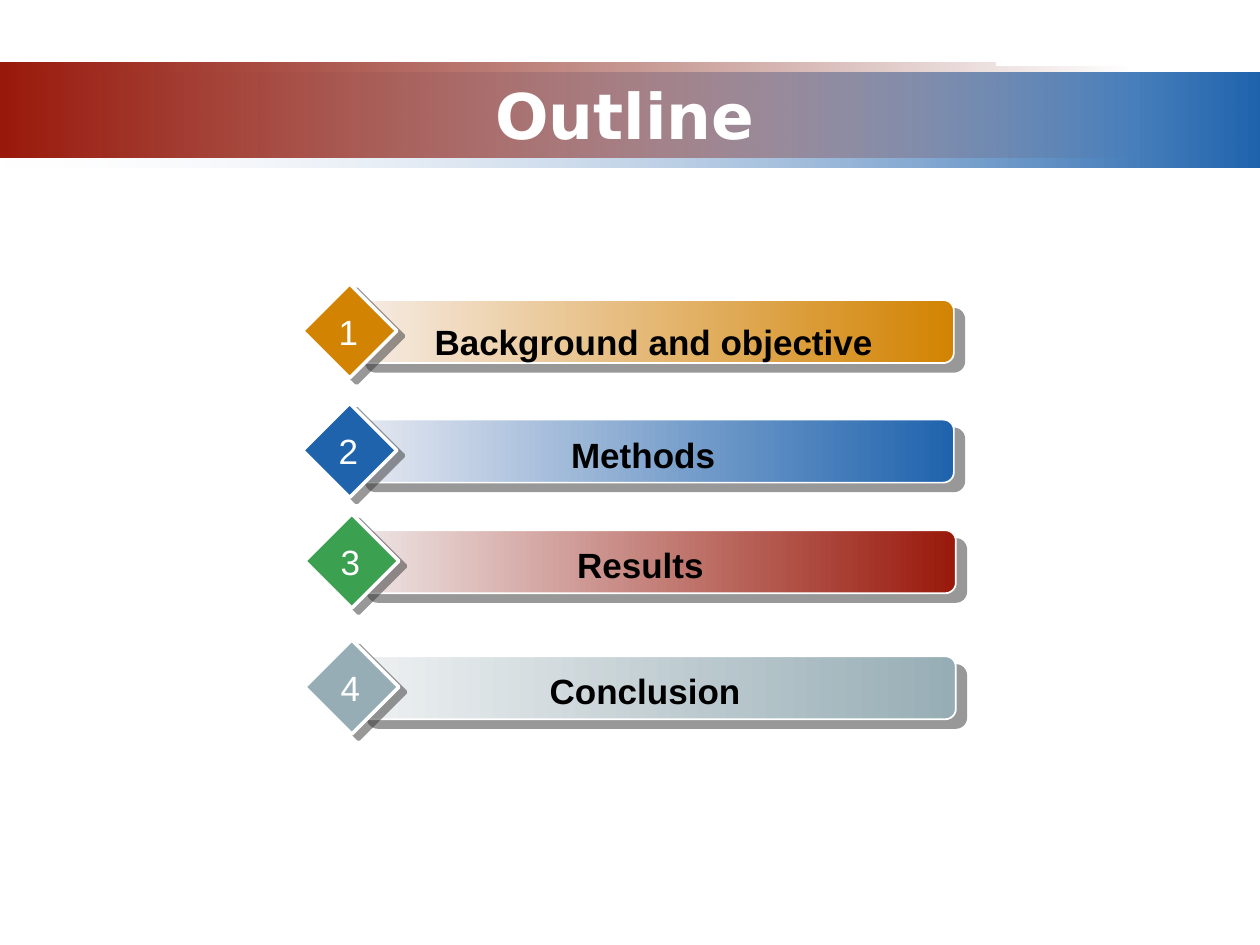
from lxml import etree
from pptx import Presentation, util as u
from pptx.dml.color import RGBColor
from pptx.enum import shapes, text
from pptx.oxml.ns import qn


def color(code):
    return RGBColor.from_string(code)


class Outline:
    """Hold the shared style and the slide being drawn."""

    white, black, shade = "FFFFFF", "000000", "333333"
    body_font, title_font = "Arial", "DejaVu Sans"

    def __init__(self, page):
        self.page = page

    def shape(self, kind, left, top, width, height, fill=None, line=0, parent=None):
        parent = parent or self.page
        box = parent.shapes.add_shape(kind, u.Cm(left), u.Cm(top), u.Cm(width), u.Cm(height))
        box.shadow.inherit = False
        if fill:
            box.fill.solid()
            box.fill.fore_color.rgb = color(fill)
        if line:
            box.line.color.rgb = color(self.white)
            box.line.width = u.Pt(line)
        else:
            box.line.fill.background()
        return box

    def gradient(self, box, start, end, clear_stop=None):
        box.fill.gradient()
        box.fill.gradient_angle = 0
        for stop, code in zip(box.fill.gradient_stops, (start, end)):
            stop.color.rgb = color(code)
        if clear_stop is not None:
            tint = box._element.spPr.findall(".//" + qn("a:gs"))[clear_stop][0]
            etree.SubElement(tint, qn("a:alpha"), val="0")

    def shadow(self, box, distance, angle):
        effects = box._element.spPr.find(qn("a:effectLst"))
        outer = etree.SubElement(effects, qn("a:outerShdw"), dist=str(u.Pt(distance)),
                                 dir=str(angle * 60000), algn="ctr", rotWithShape="0")
        tint = etree.SubElement(outer, qn("a:srgbClr"), val=self.shade)
        etree.SubElement(tint, qn("a:alpha"), val="50000")

    def label(self, words, left, top, width, height, size=20, ink=black, bold=True,
              font=body_font, align=text.PP_ALIGN.CENTER, wrap=True, indent=0, parent=None):
        parent = parent or self.page
        box = parent.shapes.add_textbox(u.Cm(left), u.Cm(top), u.Cm(width), u.Cm(height))
        frame = box.text_frame
        frame.word_wrap = wrap
        frame.margin_left = u.Cm(0.25 + indent)
        para = frame.paragraphs[0]
        para.text = words
        para.alignment = align
        para.font.name, para.font.size, para.font.bold = font, u.Pt(size), bold
        para.font.color.rgb = color(ink)
        return frame

    def band(self, left, top, width, start, end, clear_stop):
        box = self.shape(shapes.MSO_SHAPE.RECTANGLE, left, top, width, 1.9)
        self.gradient(box, start, end, clear_stop)

    def row(self, number, words, left, top, badge, start, end, place):
        group = self.page.shapes.add_group_shape()
        bar = self.shape(shapes.MSO_SHAPE.ROUNDED_RECTANGLE, left + 1.06, top + 0.33,
                         12.07, 1.27, line=1, parent=group)
        self.gradient(bar, start, end)
        self.shadow(bar, 7.8, 40)
        diamond = self.shape(shapes.MSO_SHAPE.DIAMOND, left, top, 1.9, 1.9, badge, 2, group)
        self.shadow(diamond, 5, 37)
        shift, drop, align, indent = place
        self.label(words, left + shift, top + drop, 9.55, 1.09, align=align,
                   indent=indent, parent=group)
        self.label(str(number), left + 0.47, top + 0.41, 0.91, 1.09, ink=self.white,
                   bold=False, wrap=False, parent=group)


def main():
    deck = Presentation()
    deck.slide_width, deck.slide_height = u.Cm(25.4), u.Cm(19.05)
    outline = Outline(deck.slides.add_slide(deck.slide_layouts[6]))

    outline.band(0, 1.47, 25.4, "F1F2F7", "1F63AD", 0)
    outline.band(0, 1.27, 22.86, "99190B", "6D1208", 1)
    title = outline.label("Outline", 2.34, 1.52, 20.52, 1.57, size=36, ink=outline.white,
                          font=outline.title_font)
    title.vertical_anchor = text.MSO_ANCHOR.MIDDLE

    centered, left = text.PP_ALIGN.CENTER, text.PP_ALIGN.LEFT
    rows = [
        ("Background and objective", 6.1, 5.72, "D28302", "F6ECE6", "D28302",
         (2.41, 0.61, left, 0)),
        ("Methods", 6.1, 8.13, "1F63AD", "E6E9F1", "1F63AD", (1.7, 0.48, centered, 0.78)),
        ("Results", 6.14, 10.36, "3CA051", "EEE6E6", "99190B", (1.7, 0.48, centered, 0.59)),
        ("Conclusion", 6.14, 12.9, "97ADB5", "EEF1F2", "97ADB5", (1.7, 0.48, centered, 0.78)),
    ]
    for number, row in enumerate(rows, 1):
        outline.row(number, *row)

    outline.shape(shapes.MSO_SHAPE.RECTANGLE, 20.09, 0.71, 4.8, 0.61, outline.white, 0.75)
    deck.save("out.pptx")


if __name__ == "__main__":
    main()
